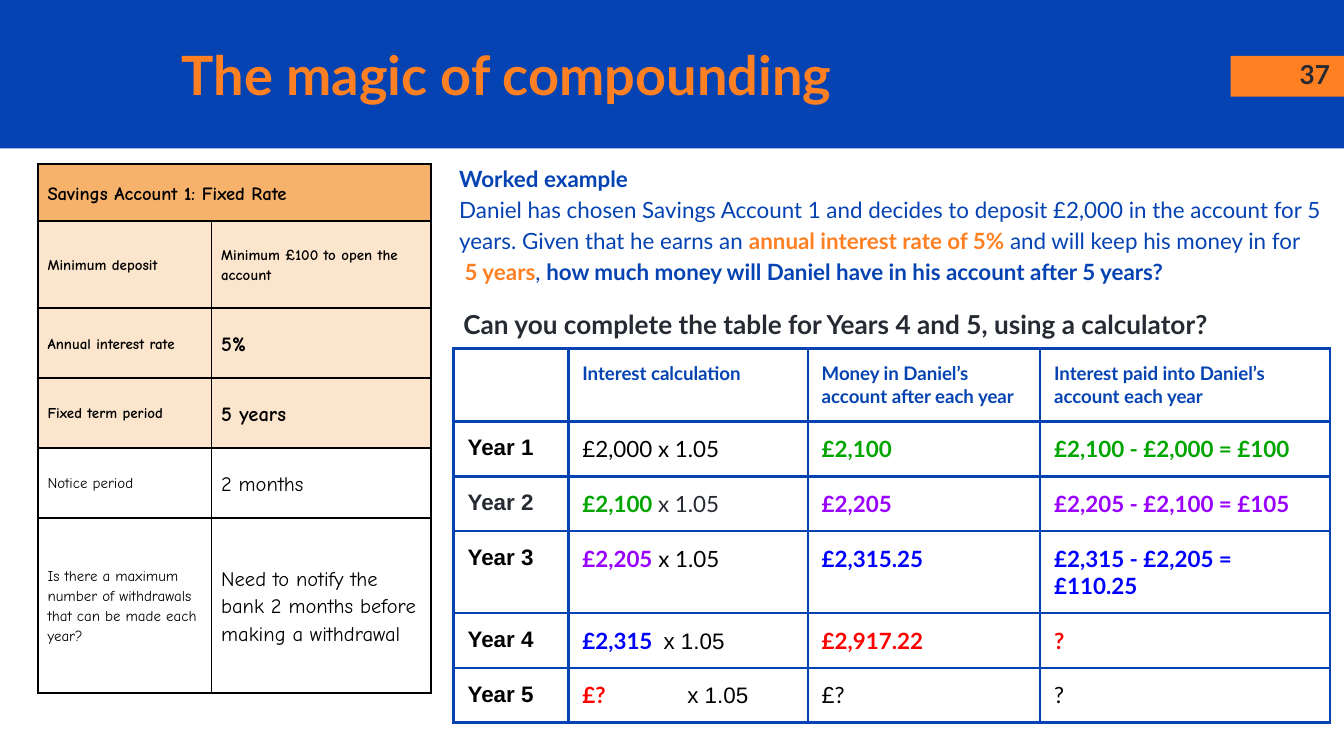
from lxml import etree
from pptx import Presentation
from pptx.dml.color import RGBColor
from pptx.enum.shapes import MSO_SHAPE
from pptx.enum.text import MSO_ANCHOR, PP_ALIGN
from pptx.oxml.ns import qn
from pptx.util import Pt

PX = 9525
RECTANGLE = MSO_SHAPE.RECTANGLE
TOP, MIDDLE = MSO_ANCHOR.TOP, MSO_ANCHOR.MIDDLE
LEFT, RIGHT = PP_ALIGN.LEFT, PP_ALIGN.RIGHT
COLOURS = {
    "blue": "0543B3", "orange": "FF8022", "ink": "262A33", "black": "000000",
    "white": "FFFFFF", "amber": "F6B26B", "peach": "FCE5CD", "green": "00A500",
    "purple": "9900FF", "azure": "0000FF", "red": "FF0000",
}
ACCOUNT_TITLE = "Savings Account 1: Fixed Rate"
ACCOUNT_ROWS = [
    ("Minimum deposit", "Minimum £100 to open the account", 8, True, 62),
    ("Annual interest rate", "5%", 11, True, 50),
    ("Fixed term period", "5 years", 11, True, 50),
    ("Notice period", "2 months", 11, False, 50),
    ("Is there a maximum number of withdrawals that can be made each year?",
     "Need to notify the bank 2 months before making a withdrawal", 11, False, 125),
]
GROWTH_HEADINGS = ["Interest calculation", "Money in Daniel’s account after each year",
                   "Interest paid into Daniel’s account each year"]
GROWTH_ROWS = [
    ("black", [("£2,000 x 1.05", "black")], ("£2,100", "green"),
     ("£2,100 - £2,000 = £100", "green"), None),
    ("ink", [("£2,100 ", "green"), ("x 1.05", "ink")], ("£2,205", "purple"),
     ("£2,205 - £2,100 = £105", "purple"), None),
    ("black", [("£2,205", "purple"), (" x 1.05", "black")], ("£2,315.25", "azure"),
     ("£2,315 - £2,205 = £110.25", "azure"), None),
    ("black", [("£2,315\t", "azure"), ("x 1.05", "black", "Arial")], ("£2,917.22", "red"),
     ("?", "red"), 58),
    ("black", [("£?\t", "red"), ("x 1.05", "black", "Arial")], ("£?", "black"),
     ("?", "black"), 75),
]


def rgb(name):
    """Return the named colour."""
    return RGBColor.from_string(COLOURS[name])


def write(para, text, size=12, colour="black", bold=False, font="Lato"):
    """Add one formatted span of text to a paragraph."""
    span = para.add_run()
    span.text = text
    span.font.size = Pt(size)
    span.font.name = font
    span.font.bold = bold
    span.font.color.rgb = rgb(colour)


def add_box(page, box, anchor=TOP):
    """Add a wrapping text box and return its text frame."""
    frame = page.shapes.add_textbox(*(length * PX for length in box)).text_frame
    frame.word_wrap = True
    frame.vertical_anchor = anchor
    frame.margin_left = frame.margin_right = 10 * PX
    frame.margin_top = frame.margin_bottom = 10 * PX
    return frame


def add_block(page, box, colour):
    """Add a plain filled rectangle."""
    block = page.shapes.add_shape(RECTANGLE, *(length * PX for length in box))
    block.shadow.inherit = False
    block.fill.solid()
    block.fill.fore_color.rgb = rgb(colour)
    block.line.fill.background()


def add_grid(page, left, top, widths, heights):
    """Add an unbanded table with the given column widths and row heights."""
    size = (sum(widths) * PX, sum(heights) * PX)
    grid = page.shapes.add_table(len(heights), len(widths), left * PX, top * PX, *size).table
    grid.first_row = grid.horz_banding = False
    for column, width in zip(grid.columns, widths):
        column.width = width * PX
    for row, height in zip(grid.rows, heights):
        row.height = height * PX
    return grid


def style_cell(cell, fill, line, points, side, anchor):
    """Set the fill, borders, margins and anchor of a cell."""
    cell.margin_left = cell.margin_right = side * PX
    cell.margin_top = cell.margin_bottom = 10 * PX
    cell.vertical_anchor = anchor
    if fill:
        cell.fill.solid()
        cell.fill.fore_color.rgb = rgb(fill)
    else:
        cell.fill.background()
    properties = cell._tc.get_or_add_tcPr()
    for index, edge in enumerate(("a:lnL", "a:lnR", "a:lnT", "a:lnB")):
        border = etree.Element(qn(edge), w=str(Pt(points)))
        solid = etree.SubElement(border, qn("a:solidFill"))
        etree.SubElement(solid, qn("a:srgbClr"), val=COLOURS[line])
        properties.insert(index, border)


def set_tab(para, position):
    """Give a paragraph one left tab stop."""
    stops = etree.SubElement(para._p.get_or_add_pPr(), qn("a:tabLst"))
    etree.SubElement(stops, qn("a:tab"), pos=str(position * PX), algn="l")


def indent(para, left):
    """Indent a whole paragraph from the left."""
    properties = para._p.get_or_add_pPr()
    properties.set("marL", str(left * PX))
    properties.set("indent", "0")


def build_header(page, left, top, width, height):
    """Build the title band and the page number badge."""
    add_block(page, (left, top, width, height), "blue")
    add_block(page, (left + width - 81, top + 40, 81, 29), "orange")
    number = add_box(page, (left + width - 58, top + 32, 58, 41)).paragraphs[0]
    number.alignment = RIGHT
    write(number, "37", size=14, colour="ink", bold=True)
    title = add_box(page, (left + 120, top + 26, 812, 54), MIDDLE).paragraphs[0]
    title.alignment = LEFT
    write(title, "The magic of compounding", size=29, colour="orange", bold=True)


def build_example(page, left, top, width, height):
    """Build the worked example and the question below it."""
    frame = add_box(page, (left, top, width, height))
    heading, story, question = frame.paragraphs[0], frame.add_paragraph(), frame.add_paragraph()
    for para, offset in ((heading, 11), (story, 11), (question, 14)):
        para.line_spacing = 1.15
        indent(para, offset)
    write(heading, "Worked example", colour="blue", bold=True)
    write(story, "Daniel has chosen Savings Account 1 and decides to deposit £2,000 in the "
          "account for 5 years. Given that he earns an ", colour="blue")
    write(story, "annual interest rate of 5% ", colour="orange", bold=True)
    write(story, "and will keep his money in for", colour="blue")
    story.add_line_break()
    write(story, " 5 years", colour="orange", bold=True)
    write(story, ", ", colour="blue")
    write(story, "how much money will Daniel have in his account after 5 years?",
          colour="blue", bold=True)
    question.space_before = Pt(10)
    write(question, "Can you complete the table for Years 4 and 5, using a calculator?",
          size=14, colour="ink", bold=True)


def build_account(page, left, top):
    """Build the table of savings account terms."""
    heights = [41] + [row[-1] for row in ACCOUNT_ROWS]
    grid = add_grid(page, left, top, [124, 157], heights)
    fills = ["amber"] + ["peach" if row[3] else None for row in ACCOUNT_ROWS]
    for row, fill in enumerate(fills):
        for column in range(2):
            style_cell(grid.cell(row, column), fill, "black", 1, 7, MIDDLE)
    grid.cell(0, 0).merge(grid.cell(0, 1))
    entries = [(0, 0, ACCOUNT_TITLE, 10, True)]
    for row, (label, value, size, bold, _) in enumerate(ACCOUNT_ROWS, 1):
        entries += [(row, 0, label, 8, bold), (row, 1, value, size, bold)]
    for row, column, text, size, bold in entries:
        para = grid.cell(row, column).text_frame.paragraphs[0]
        para.line_spacing = 1.15
        write(para, text, size=size, bold=bold, font="Comic Neue")


def build_growth(page, left, top):
    """Build the year by year interest table."""
    grid = add_grid(page, left, top, [82, 171, 166, 207], [51, 39, 38, 58, 39, 39])
    for cell in grid.iter_cells():
        style_cell(cell, "white", "blue", 1.5, 10, TOP)
    for column, text in enumerate(GROWTH_HEADINGS, 1):
        para = grid.cell(0, column).text_frame.paragraphs[0]
        write(para, text, size=10, colour="blue", bold=True)
    for year, (shade, calculation, money, interest, tab) in enumerate(GROWTH_ROWS, 1):
        paras = [grid.cell(year, column).text_frame.paragraphs[0] for column in range(4)]
        write(paras[0], f"Year {year}", colour=shade, bold=True, font="Arial")
        if tab:
            set_tab(paras[1], tab)
        for para, spans in zip(paras[1:], (calculation, [money], [interest])):
            for text, colour, *font in spans:
                write(para, text, colour=colour, bold=colour not in ("black", "ink"),
                      font=font[0] if font else "Lato")


def main():
    """Build the slide and save the deck."""
    deck = Presentation()
    deck.slide_width, deck.slide_height = 960 * PX, 540 * PX
    page = deck.slides.add_slide(deck.slide_layouts[6])
    build_header(page, 0, 0, 960, 106)
    build_example(page, 307, 105, 653, 145)
    build_account(page, 27, 117)
    build_growth(page, 324, 249)
    deck.save("out.pptx")


if __name__ == "__main__":
    main()
